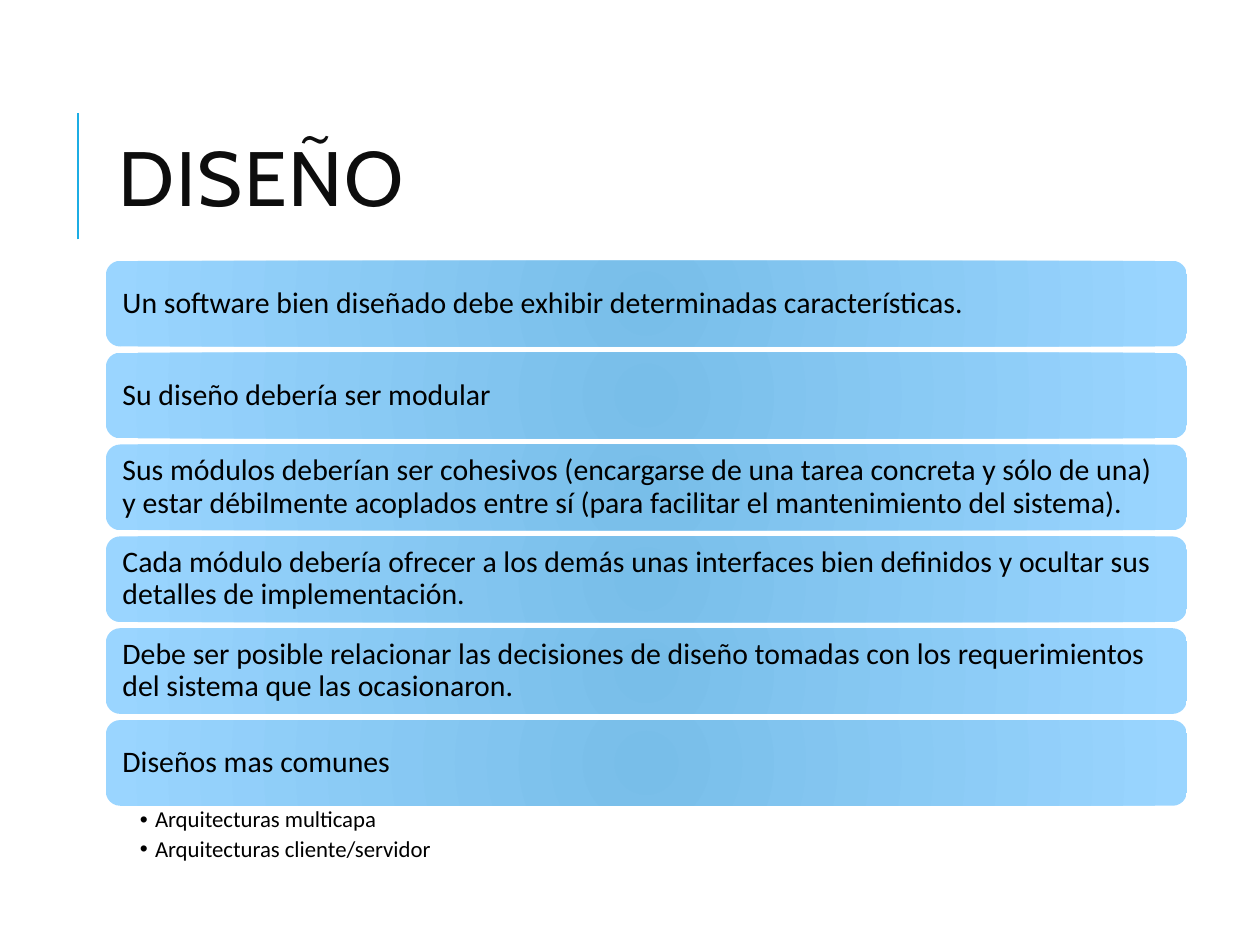
"""Build a design slide: a title, six stacked statement bars and a short list."""
from dataclasses import dataclass

from lxml.etree import SubElement
from pptx import Presentation
from pptx.dml.color import RGBColor
from pptx.enum.shapes import MSO_CONNECTOR, MSO_SHAPE
from pptx.enum.text import MSO_ANCHOR, MSO_AUTO_SIZE, PP_ALIGN
from pptx.oxml.ns import qn
from pptx.util import Inches, Pt

STATEMENTS = (
    "Un software bien diseñado debe exhibir determinadas características.",
    "Su diseño debería ser modular",
    "Sus módulos deberían ser cohesivos (encargarse de una tarea concreta y sólo de una) "
    "y estar débilmente acoplados entre sí (para facilitar el mantenimiento del sistema).",
    "Cada módulo debería ofrecer a los demás unas interfaces bien definidos y ocultar sus "
    "detalles de implementación.",
    "Debe ser posible relacionar las decisiones de diseño tomadas con los requerimientos "
    "del sistema que las ocasionaron.",
    "Diseños mas comunes",
)
ARCHITECTURES = ("Arquitecturas multicapa", "Arquitecturas cliente/servidor")


@dataclass(frozen=True)
class Theme:
    accent: str = "1CADE4"
    title_ink: str = "0D0D0D"
    ink: str = "000000"
    bar_center: str = "78BEE9"
    bar_edge: str = "9AD5FF"
    title_font: str = "Cabin"
    body_font: str = "Calibri"
    title_size: int = 44
    bar_size: int = 17
    list_size: int = 13


def write(para, text, *, font, size, color, line_spacing=0.9, after=0, tracking=None):
    para.alignment = PP_ALIGN.LEFT
    para.line_spacing = line_spacing
    para.space_before = Pt(0)
    para.space_after = Pt(after)
    span = para.add_run()
    span.text = text
    span.font.name = font
    span.font.size = Pt(size)
    span.font.color.rgb = RGBColor.from_string(color)
    if tracking is not None:
        span.font._element.set("spc", str(tracking * 100))


class SlideBuilder:
    COLUMNS, ROWS = 100, 75

    def __init__(self, deck, theme):
        self.theme = theme
        self.column = deck.slide_width / self.COLUMNS
        self.row = deck.slide_height / self.ROWS
        self.page = deck.slides.add_slide(deck.slide_layouts[1])

    def area(self, left, top, width, height):
        return (round(left * self.column), round(top * self.row),
                round(width * self.column), round(height * self.row))

    def frame(self, box, anchor, margins):
        frame = box.text_frame
        frame.word_wrap = True
        frame.auto_size = MSO_AUTO_SIZE.NONE
        frame.vertical_anchor = anchor
        (frame.margin_left, frame.margin_top,
         frame.margin_right, frame.margin_bottom) = map(Inches, margins)
        return frame

    def place(self, box, area):
        box.left, box.top, box.width, box.height = self.area(*area)

    def rule(self, column, top, bottom):
        left, start, _, length = self.area(column, top, 0, bottom - top)
        line = self.page.shapes.add_connector(
            MSO_CONNECTOR.STRAIGHT, left, start + length, left, start)
        line.line.color.rgb = RGBColor.from_string(self.theme.accent)
        line.line.width = Pt(1.5)
        SubElement(line._element.spPr, qn("a:effectLst"))

    def title(self, text, area):
        box = self.page.shapes.title
        self.place(box, area)
        frame = self.frame(box, MSO_ANCHOR.MIDDLE, (0.1, 0.05, 0.1, 0.05))
        write(frame.paragraphs[0], text, font=self.theme.title_font,
              size=self.theme.title_size, color=self.theme.title_ink,
              line_spacing=0.8, tracking=1)

    def bar(self, text, area):
        box = self.page.shapes.add_shape(MSO_SHAPE.ROUNDED_RECTANGLE, *self.area(*area))
        box.shadow.inherit = False
        box.line.fill.background()
        self.radial_fill(box)
        frame = self.frame(box, MSO_ANCHOR.MIDDLE, (0.1, 0.1, 0.1, 0.1))
        write(frame.paragraphs[0], text, font=self.theme.body_font,
              size=self.theme.bar_size, color=self.theme.ink)

    def radial_fill(self, box):
        box.fill.gradient()
        for stop, color in zip(box.fill.gradient_stops,
                               (self.theme.bar_center, self.theme.bar_edge)):
            stop.color.rgb = RGBColor.from_string(color)
        gradient = box._element.spPr.find(qn("a:gradFill"))
        gradient.remove(gradient.find(qn("a:lin")))
        circle = SubElement(gradient, qn("a:path"), {"path": "circle"})
        SubElement(circle, qn("a:fillToRect"), dict.fromkeys("ltrb", "100000"))

    def bullets(self, items, area):
        box = self.page.placeholders[1]
        self.place(box, area)
        frame = self.frame(box, MSO_ANCHOR.TOP, (0.27, 0.02, 0.13, 0.02))
        indent = Inches(0.12)
        for index, item in enumerate(items):
            para = frame.add_paragraph() if index else frame.paragraphs[0]
            para.level = 1
            write(para, item, font=self.theme.body_font, size=self.theme.list_size,
                  color=self.theme.ink, after=0.2 * self.theme.list_size)
            properties = para._p.get_or_add_pPr()
            properties.set("marL", str(indent))
            properties.set("indent", str(-indent))
            SubElement(properties, qn("a:buChar"), {"char": "•"})


def main():
    deck = Presentation()
    deck.slide_width, deck.slide_height = Inches(10), Inches(7.5)
    slide = SlideBuilder(deck, Theme())
    left, width, first_top, pitch, height = 8.4, 85.8, 20.7, 7.29, 6.8
    slide.rule(6.2, 9, 19)
    slide.title("DISEÑO", (left, 6.4, 79.7, 16.4))
    for index, statement in enumerate(STATEMENTS):
        slide.bar(statement, (left, first_top + index * pitch, width, height))
    list_top = first_top + (len(STATEMENTS) - 1) * pitch + height
    slide.bullets(ARCHITECTURES, (left, list_top, width, 4.4))
    deck.save("out.pptx")


if __name__ == "__main__":
    main()
